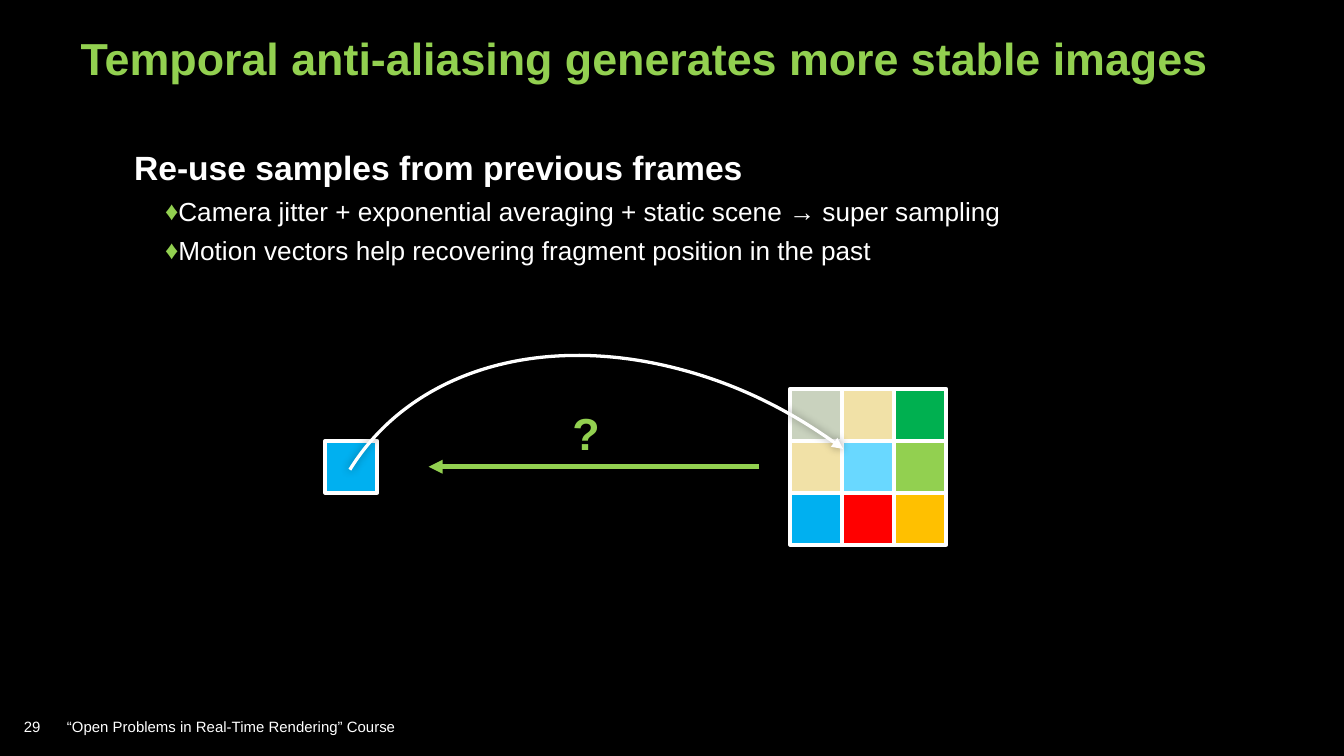
from lxml.etree import SubElement
from pptx import Presentation
from pptx.dml.color import RGBColor
from pptx.enum.shapes import MSO_CONNECTOR as Link, MSO_SHAPE as Shape
from pptx.enum.text import MSO_ANCHOR as Anchor, MSO_AUTO_SIZE as Fit, PP_ALIGN as Align
from pptx.oxml.ns import qn
from pptx.util import Inches, Pt

WHITE, GREEN, BLACK = "FFFFFF", "92D050", "000000"
SKY, SAND = "00B0F0", "F1E1A7"


def paint(fill, color):
    """Give a fill (of a shape, line, font or background) one solid colour."""
    fill.solid()
    fill.fore_color.rgb = RGBColor.from_string(color)


def write(box, text, size=8, color=WHITE, bold=False, align=Align.LEFT,
          anchor=Anchor.TOP, inset=0.1, wrap=True, indent=(0, 0),
          spacing=1, bullet=None, more=False):
    """Write one paragraph; more=True adds it below those already there."""
    frame = box.text_frame
    frame.word_wrap, frame.auto_size = wrap, Fit.NONE
    frame.vertical_anchor = anchor
    frame.margin_left = frame.margin_right = Inches(0.1)
    frame.margin_top = frame.margin_bottom = Inches(inset)
    para = frame.add_paragraph() if more else frame.paragraphs[0]
    para.alignment, para.line_spacing = align, spacing
    props = para._p.get_or_add_pPr()
    props.set("marL", str(Inches(indent[0])))
    props.set("indent", str(Inches(indent[1])))
    if bullet:
        para.level = 1
        tint = SubElement(props, qn("a:buClr"))
        SubElement(tint, qn("a:srgbClr"), val=GREEN)
        SubElement(props, qn("a:buFont"), typeface="Arial")
        SubElement(props, qn("a:buChar"), char=bullet)
    run = para.add_run()
    run.text = text
    font = run.font
    font.name, font.size, font.bold = "Arial", Pt(size), bold
    paint(font.fill, color)


deck = Presentation()
deck.slide_width = Inches(10)
deck.slide_height = deck.slide_width * 9 // 16
COL, ROW = deck.slide_width // 100, deck.slide_height // 100  # 1% of each side

slide = deck.slides.add_slide(deck.slide_layouts[5])
shapes = slide.shapes
paint(slide.background.fill, BLACK)

# Title, footer and page number
title = shapes.title
title.left, title.top = 5 * COL, int(0.53 * ROW)
title.width, title.height = 90 * COL, int(12.44 * ROW)
write(title, "Temporal anti-aliasing generates more stable images",
      size=24, color=GREEN, bold=True, anchor=Anchor.BOTTOM)

footer = shapes.add_textbox(4 * COL, int(93.2 * ROW), 60 * COL, int(7.6 * ROW))
write(footer, "“Open Problems in Real-Time Rendering” Course")

page = shapes.add_textbox(-2 * COL, int(92.3 * ROW), 6 * COL, int(7.6 * ROW))
write(page, "29", align=Align.RIGHT, anchor=Anchor.MIDDLE)

# Main statement and its two points
points = shapes.add_textbox(5 * COL, int(16.36 * ROW), 90 * COL, int(72.4 * ROW))
write(points, "Re-use samples from previous frames",
      size=18, bold=True, indent=(0, 0.4), spacing=1.25)
for point in (
    "Camera jitter + exponential averaging + static scene → super sampling",
    "Motion vectors help recovering fragment position in the past",
):
    write(points, point, size=14, indent=(0.38, 0.25), spacing=1.25,
          bullet="♦", more=True)

# Current pixel on the left, 3 x 3 neighbourhood of the past frame on the right
CELL = int(3.87 * COL)
middle = int(58.3 * ROW)
past_left, past_top = int(58.8 * COL), middle - CELL
past_colors = (
    ("C9D2BE", SAND, "00B050"),
    (SAND, "69D8FF", GREEN),
    (SKY, "FF0000", "FFC000"),
)
past_frame = shapes.add_group_shape()
pixels = [(shapes, int(24.2 * COL), middle, SKY)]
for row, colors in enumerate(past_colors):
    for col, color in enumerate(colors):
        pixels.append((past_frame.shapes, past_left + col * CELL,
                       past_top + row * CELL, color))
for parent, left, top, color in pixels:
    pixel = parent.add_shape(Shape.RECTANGLE, left, top, CELL, CELL)
    pixel.shadow.inherit = False
    paint(pixel.fill, color)
    paint(pixel.line.fill, WHITE)
    pixel.line.width = Pt(2)

# Curved path from the current pixel to its past position, straight arrow back
path_arc = shapes.add_shape(Shape.ARC, int(28.1 * COL), int(39.5 * ROW),
                            int(43.4 * COL), int(101.7 * ROW))
path_arc.adjustments[0], path_arc.adjustments[1] = 160.286, 0
path_arc.rotation = 306.6
path_arc.fill.background()

back_y = middle + CELL // 2
back_arrow = shapes.add_connector(Link.STRAIGHT, int(56.5 * COL), back_y,
                                  int(31.9 * COL), back_y)

for arrow, color, width in ((path_arc, WHITE, 1.75), (back_arrow, GREEN, 2.5)):
    paint(arrow.line.fill, color)
    arrow.line.width = Pt(width)
    SubElement(arrow.line._get_or_add_ln(), qn("a:tailEnd"), type="triangle")

SubElement(back_arrow._element.spPr, qn("a:effectLst"))
path_arc.shadow.inherit = False
effects = path_arc._element.spPr.find(qn("a:effectLst"))
glow = SubElement(effects, qn("a:outerShdw"), blurRad=str(Pt(5)), dist="0",
                  dir="0", rotWithShape="0")
shade = SubElement(glow, qn("a:srgbClr"), val=BLACK)
SubElement(shade, qn("a:alpha"), val="40000")

question = shapes.add_textbox(int(41.6 * COL), int(52.8 * ROW),
                              int(4.1 * COL), int(8.9 * ROW))
write(question, "?", size=24, color=GREEN, bold=True, inset=0.05, wrap=False)

deck.save("out.pptx")
